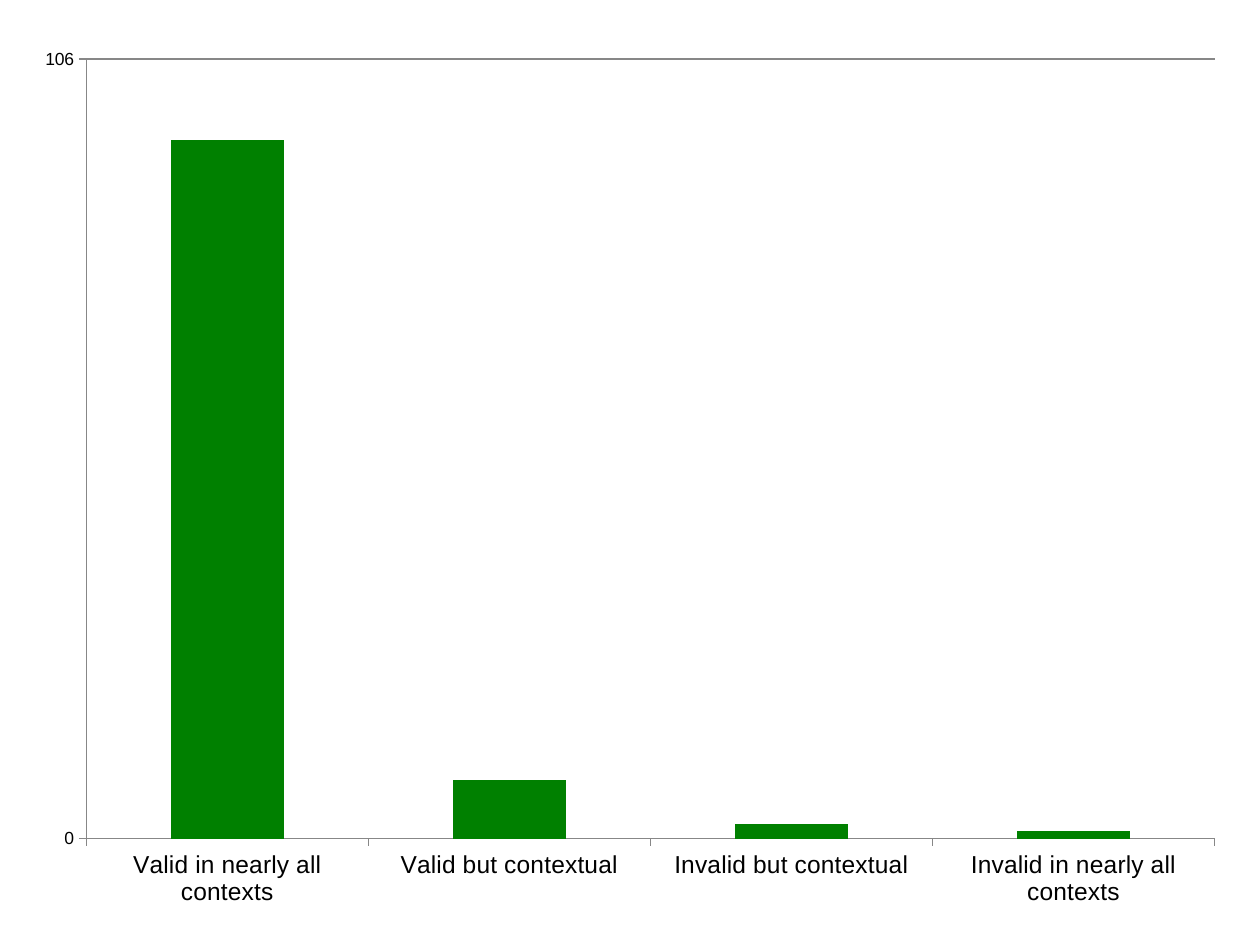
from pptx import Presentation
from pptx.chart.data import CategoryChartData
from pptx.dml.color import RGBColor
from pptx.enum.chart import XL_CHART_TYPE as ChartType, XL_TICK_MARK as TickMark
from pptx.util import Pt


def paint(fill, color):
    fill.solid()
    fill.fore_color.rgb = RGBColor.from_string(color)


prs = Presentation()
prs.slide_width, prs.slide_height = Pt(720), Pt(540)
slide = prs.slides.add_slide(prs.slide_layouts[6])
paint(slide.background.fill, "FFFFFF")

validity = CategoryChartData()
validity.categories = [
    "Valid in nearly all contexts",
    "Valid but contextual",
    "Invalid but contextual",
    "Invalid in nearly all contexts",
]
validity.add_series("Series 1", [95, 8, 2, 1])

chart = slide.shapes.add_chart(
    ChartType.COLUMN_CLUSTERED, Pt(12), Pt(18), Pt(696), Pt(510), validity
).chart
chart.has_legend = False
chart.has_title = False
chart.font.name = "Arial"
chart.font.size = Pt(10)
paint(chart.font.fill, "000000")

columns = chart.plots[0]
columns.gap_width = 150
columns.vary_by_categories = False
paint(columns.series[0].format.fill, "008000")

contexts, count = chart.category_axis, chart.value_axis
count.minimum_scale = 0
count.maximum_scale = 106
count.major_unit = 106
count.has_major_gridlines = True

for axis, size in ((contexts, 14), (count, 10)):
    axis.major_tick_mark = TickMark.OUTSIDE
    axis.minor_tick_mark = TickMark.NONE
    axis.tick_labels.font.name = "Arial"
    axis.tick_labels.font.size = Pt(size)
    paint(axis.tick_labels.font.fill, "000000")

for line in (contexts.format.line, count.format.line, count.major_gridlines.format.line):
    line.width = Pt(0.75)
    paint(line.fill, "878787")

prs.save("out.pptx")
